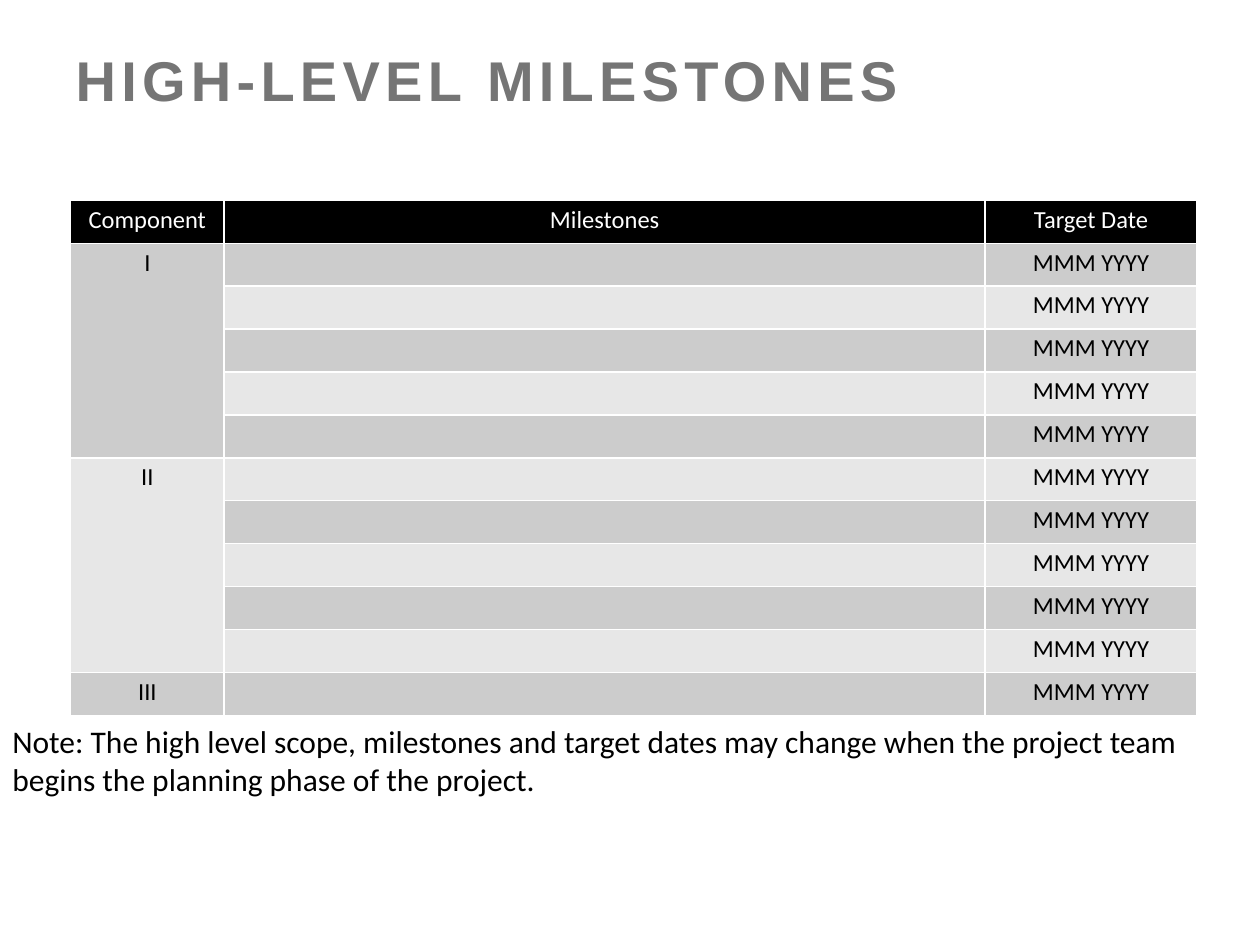
from lxml.etree import SubElement
from pptx import Presentation
from pptx.dml.color import RGBColor
from pptx.enum.text import MSO_ANCHOR, PP_ALIGN
from pptx.oxml.ns import qn
from pptx.util import Inches, Pt

TITLE = "HIGH-LEVEL MILESTONES"
HEADERS = ["Component", "Milestones", "Target Date"]
COMPONENTS = [("I", 5), ("II", 5), ("III", 1)]
TARGET_DATE = "MMM YYYY"
NOTE = ("Note: The high level scope, milestones and target dates may change "
        "when the project team begins the planning phase of the project.")

COLORS = {"title": "757575", "header": "000000", "header text": "FFFFFF",
          "text": "000000", "odd": "CCCCCC", "even": "E7E7E7", "border": "FFFFFF"}
COLUMN_WIDTHS = [1.22, 6.04, 1.68]
TABLE_HEIGHT = 4.09
TITLE_FORMAT = {"name": "Arial", "size": Pt(32), "bold": True}
CELL_FORMAT = {"name": "Calibri", "size": Pt(14), "bold": False}
NOTE_FORMAT = {"name": "Calibri", "size": Pt(18)}
CELL_MARGINS = {"margin_left": Inches(0.06), "margin_right": Inches(0.06),
                "margin_top": 0, "margin_bottom": 0}


def set_attributes(target, values):
    for name, value in values.items():
        setattr(target, name, value)


def write(paragraph, text, values, color):
    run = paragraph.add_run()
    run.text = text
    set_attributes(run.font, values)
    run.font.color.rgb = RGBColor.from_string(COLORS[color])
    return run


def add_borders(cell):
    properties = cell._tc.get_or_add_tcPr()
    for position, side in enumerate(("lnL", "lnR", "lnT", "lnB")):
        line = SubElement(properties, qn(f"a:{side}"), w=str(Pt(1)))
        fill = SubElement(line, qn("a:solidFill"))
        SubElement(fill, qn("a:srgbClr"), val=COLORS["border"])
        properties.insert(position, line)


def format_cell(cell, text, fill, color):
    set_attributes(cell, CELL_MARGINS)
    cell.fill.solid()
    cell.fill.fore_color.rgb = RGBColor.from_string(COLORS[fill])
    add_borders(cell)
    if text:
        paragraph = cell.text_frame.paragraphs[0]
        set_attributes(paragraph, {"alignment": PP_ALIGN.CENTER, "line_spacing": 1.15})
        write(paragraph, text, CELL_FORMAT, color)


def add_title(slide):
    title = slide.shapes.title
    set_attributes(title, {"left": Inches(0.5), "top": Inches(0.31),
                           "width": Inches(9), "height": Inches(1.25)})
    title.text_frame.vertical_anchor = MSO_ANCHOR.TOP
    paragraph = title.text_frame.paragraphs[0]
    paragraph.alignment = PP_ALIGN.LEFT
    run = write(paragraph, TITLE, TITLE_FORMAT, "title")
    run._r.get_or_add_rPr().set("spc", "300")


def add_milestones(slide):
    rows = [HEADERS]
    for component, count in COMPONENTS:
        rows += [[component if index == 0 else "", "", TARGET_DATE] for index in range(count)]
    table = slide.shapes.add_table(
        len(rows), len(HEADERS), Inches(0.56), Inches(1.59),
        Inches(sum(COLUMN_WIDTHS)), Inches(TABLE_HEIGHT)).table
    for column, width in zip(table.columns, COLUMN_WIDTHS):
        column.width = Inches(width)
    for row_index, texts in enumerate(rows):
        fill = "header" if row_index == 0 else "odd" if row_index % 2 else "even"
        color = "header text" if row_index == 0 else "text"
        for column_index, text in enumerate(texts):
            format_cell(table.cell(row_index, column_index), text, fill, color)
    first = 1
    for component, count in COMPONENTS:
        if count > 1:
            table.cell(first, 0).merge(table.cell(first + count - 1, 0))
        first += count


def add_note(slide):
    note = slide.shapes.add_textbox(0, Inches(5.68), Inches(9.7), Inches(0.71))
    note.text_frame.word_wrap = True
    write(note.text_frame.paragraphs[0], NOTE, NOTE_FORMAT, "text")


def main():
    presentation = Presentation()
    presentation.slide_width = Inches(10)
    presentation.slide_height = Inches(7.5)
    slide = presentation.slides.add_slide(presentation.slide_layouts[5])
    add_title(slide)
    add_milestones(slide)
    add_note(slide)
    presentation.save("out.pptx")


if __name__ == "__main__":
    main()
